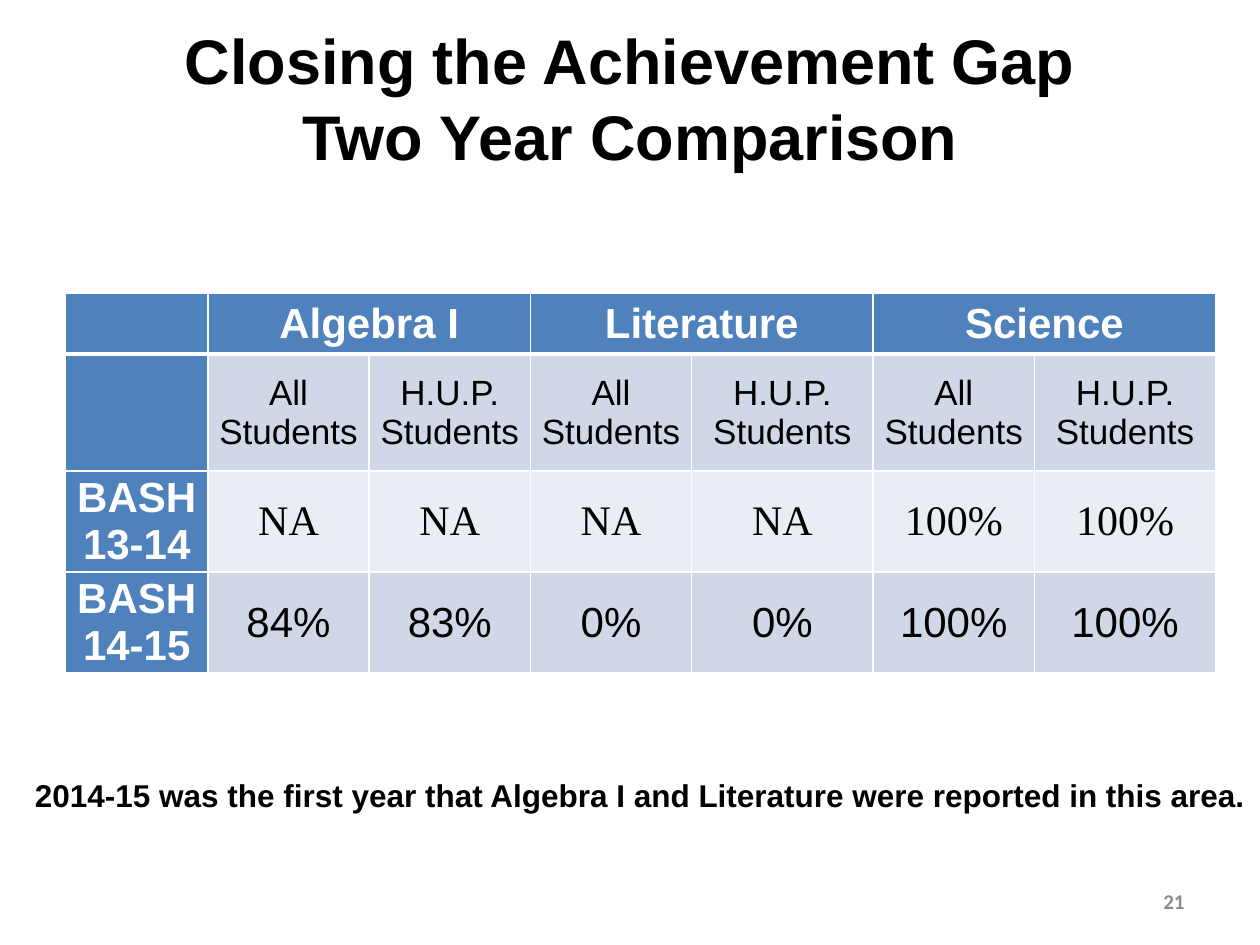
from lxml.etree import SubElement
from pptx import Presentation
from pptx.dml.color import RGBColor
from pptx.enum.text import MSO_ANCHOR, PP_ALIGN
from pptx.oxml.ns import qn
from pptx.util import Inches, Pt

COLORS = {
    "black": "000000",
    "white": "FFFFFF",
    "gray": "8C8C8C",
    "header": "4F81BD",
    "band_dark": "D0D8E8",
    "band_light": "E9EDF4",
}

COLUMN_WIDTHS = [1.13, 1.28, 1.28, 1.28, 1.44, 1.28, 1.44]
ROW_HEIGHTS = [0.48, 0.93, 0.74, 0.74]
SUBJECTS = ["Algebra I", "Literature", "Science"]
GROUPS = ["All Students", "H.U.P.\nStudents", "All Students", "H.U.P.\nStudents",
          "All Students", "H.U.P. Students"]
RESULTS = [
    ["BASH 13-14", "NA", "NA", "NA", "NA", "100%", "100%"],
    ["BASH 14-15", "84%", "83%", "0%", "0%", "100%", "100%"],
]


def write(frame, text, size=24, font="Arial", color="black", bold=False,
          align=PP_ALIGN.CENTER):
    """Fill a text frame and format each of its paragraphs."""
    frame.text = text
    for paragraph in frame.paragraphs:
        paragraph.alignment = align
        for run in paragraph.runs:
            run.font.size = Pt(size)
            run.font.name = font
            run.font.bold = bold
            run.font.color.rgb = RGBColor.from_string(COLORS[color])


def set_borders(cell, top=1, bottom=1):
    properties = cell._tc.get_or_add_tcPr()
    sides = [("a:lnL", 1), ("a:lnR", 1), ("a:lnT", top), ("a:lnB", bottom)]
    for position, (side, width) in enumerate(sides):
        line = SubElement(properties, qn(side), w=str(Pt(width)))
        fill = SubElement(line, qn("a:solidFill"))
        SubElement(fill, qn("a:srgbClr"), val=COLORS["white"])
        properties.insert(position, line)


def style_cell(cell, fill, text="", **text_format):
    cell.fill.solid()
    cell.fill.fore_color.rgb = RGBColor.from_string(COLORS[fill])
    cell.vertical_anchor = MSO_ANCHOR.MIDDLE
    cell.margin_left = cell.margin_right = Inches(0.07)
    cell.margin_top = cell.margin_bottom = 0
    if text:
        write(cell.text_frame, text, **text_format)


def add_title(slide):
    title = slide.shapes.title
    title.left, title.top = Inches(0.5), Inches(0.42)
    title.width, title.height = Inches(9), Inches(1.25)
    frame = title.text_frame
    write(frame, "Closing the Achievement Gap\vTwo Year Comparison", size=36, bold=True)
    frame.vertical_anchor = MSO_ANCHOR.MIDDLE
    frame.margin_bottom = Inches(0.6)


def add_text(slide, left, top, width, height, text, wrap=True,
             anchor=MSO_ANCHOR.TOP, **text_format):
    box = slide.shapes.add_textbox(Inches(left), Inches(top), Inches(width), Inches(height))
    box.text_frame.word_wrap = wrap
    box.text_frame.vertical_anchor = anchor
    write(box.text_frame, text, **text_format)


def add_results_table(slide):
    table = slide.shapes.add_table(
        len(ROW_HEIGHTS), len(COLUMN_WIDTHS), Inches(0.52), Inches(2.33),
        Inches(sum(COLUMN_WIDTHS)), Inches(sum(ROW_HEIGHTS))).table
    table.first_col = True
    for column, width in zip(table.columns, COLUMN_WIDTHS):
        column.width = Inches(width)
    for row, height in zip(table.rows, ROW_HEIGHTS):
        row.height = Inches(height)

    # Subject headings, each over two student groups
    style_cell(table.cell(0, 0), "header")
    for index, subject in enumerate(SUBJECTS):
        first = 2 * index + 1
        table.cell(0, first).merge(table.cell(0, first + 1))
        style_cell(table.cell(0, first), "header", subject, color="white", bold=True)

    # Student groups
    style_cell(table.cell(1, 0), "header")
    for column, group in enumerate(GROUPS, start=1):
        style_cell(table.cell(1, column), "band_dark", group, size=20)

    # Results by year
    bands = [("band_light", "Times New Roman"), ("band_dark", "Arial")]
    for row, ((year, *scores), (band, font)) in enumerate(zip(RESULTS, bands), start=2):
        style_cell(table.cell(row, 0), "header", year, color="white", bold=True)
        for column, score in enumerate(scores, start=1):
            style_cell(table.cell(row, column), band, score, font=font)

    # White grid with a heavier rule under the headings
    for row in range(len(ROW_HEIGHTS)):
        for column in range(len(COLUMN_WIDTHS)):
            set_borders(table.cell(row, column), top=3 if row == 1 else 1,
                        bottom=3 if row == 0 else 1)


def main():
    presentation = Presentation()
    presentation.slide_width, presentation.slide_height = Inches(10), Inches(7.5)
    slide = presentation.slides.add_slide(presentation.slide_layouts[5])

    add_title(slide)
    # Slide number
    add_text(slide, 7.17, 6.95, 2.33, 0.4, "21", anchor=MSO_ANCHOR.MIDDLE, size=12,
             font="Calibri", color="gray", bold=True, align=PP_ALIGN.RIGHT)
    add_results_table(slide)
    # Note under the table
    add_text(slide, 0.13, 6.11, 9.9, 0.4,
             "2014-15 was the first year that Algebra I and Literature "
             "were reported in this area.", wrap=False, size=18, bold=True)

    presentation.save("out.pptx")


if __name__ == "__main__":
    main()
